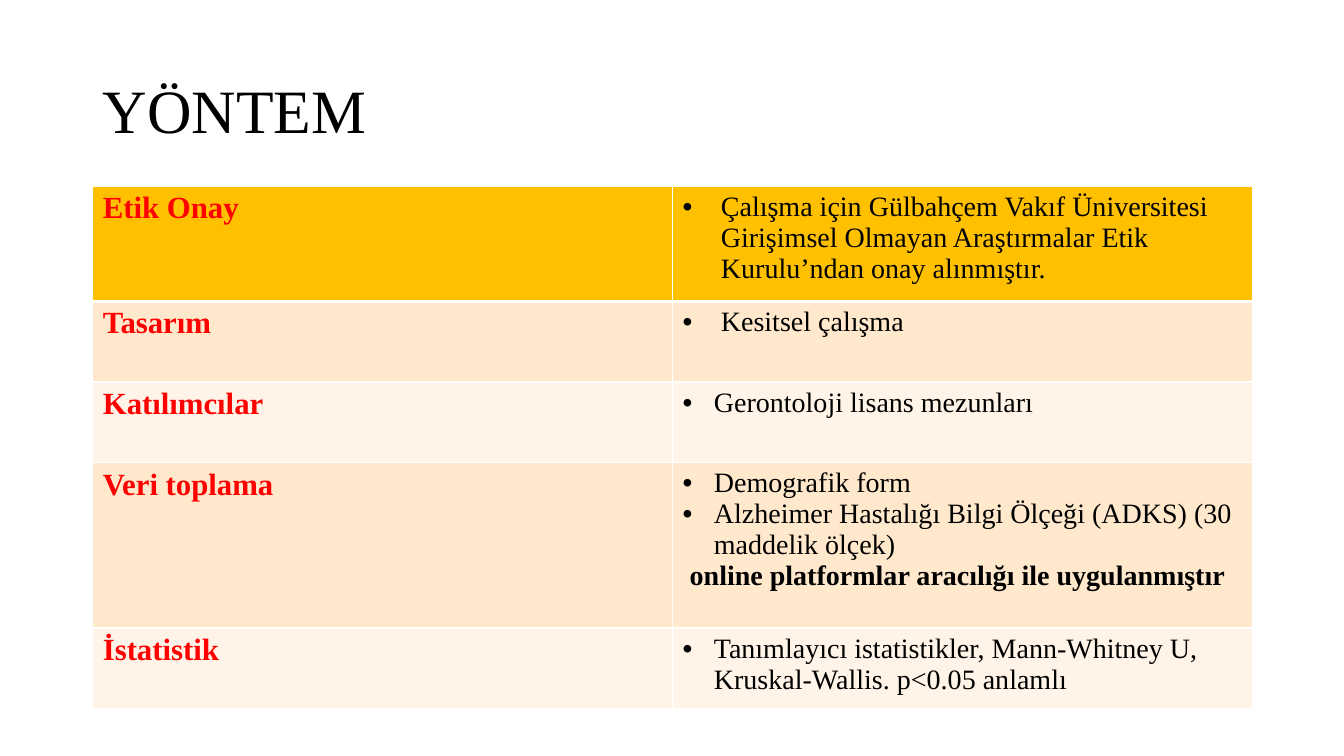
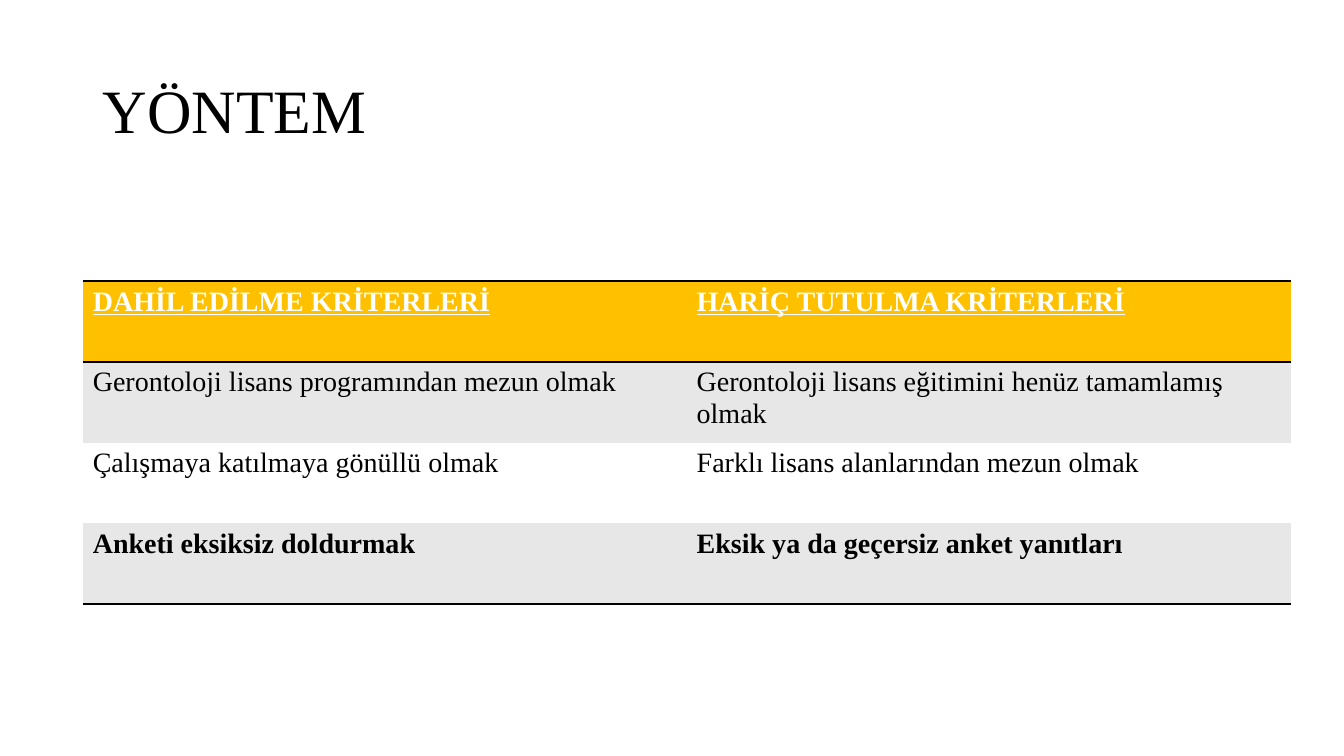
"""Build two method slides, each with a title and a two-column table."""
import pptx
import pptx.dml.color
import pptx.enum.text
import pptx.oxml.ns
import pptx.util
import lxml.etree

Inches = pptx.util.Inches
Pt = pptx.util.Pt
qn = pptx.oxml.ns.qn
FONT = "Times New Roman"
BLACK, WHITE, RED, AMBER = "000000", "FFFFFF", "FF0000", "FFC000"
PEACH, CREAM, GREY = "FFE8CC", "FFF4E7", "E7E7E7"
NO_STYLE = "{2D5ABB26-0587-4C30-8999-92F81FD0307C}"


def format_paragraph(para, size, color, bold=False, underline=False, indent=0, bullet=False):
    for span in para.runs:
        span.font.name = FONT
        span.font.size = Pt(size)
        span.font.bold = bold
        span.font.underline = underline
        span.font.color.rgb = pptx.dml.color.RGBColor.from_string(color)
    properties = para._p.get_or_add_pPr()
    if indent:
        properties.set("marL", str(Inches(indent)))
    if bullet:
        properties.set("indent", str(-Inches(indent)))
        bullet_font = lxml.etree.SubElement(properties, qn("a:buFont"))
        bullet_font.set("typeface", "Arial")
        lxml.etree.SubElement(properties, qn("a:buChar")).set("char", "•")


def add_grid(page, left, top, column_width, heights, rows, fills, line_color, edges, side_width):
    frame = page.shapes.add_table(
        len(rows), 2, Inches(left), Inches(top), Inches(2 * column_width), Inches(sum(heights)))
    grid = frame.table
    grid._tbl.tblPr.find(qn("a:tableStyleId")).text = NO_STYLE
    grid.horz_banding = False
    for column in grid.columns:
        column.width = Inches(column_width)
    for r, cells in enumerate(rows):
        grid.rows[r].height = Inches(heights[r])
        for c, paragraphs in enumerate(cells):
            cell = grid.cell(r, c)
            cell.fill.solid()
            cell.fill.fore_color.rgb = pptx.dml.color.RGBColor.from_string(fills[r])
            cell.text_frame.text = "\n".join(text for text, style in paragraphs)
            for para, (text, style) in zip(cell.text_frame.paragraphs, paragraphs):
                format_paragraph(para, **style)
            borders = [("lnL", side_width), ("lnR", side_width),
                       ("lnT", edges[r]), ("lnB", edges[r + 1])]
            for position, (side, width) in enumerate(borders):
                line = lxml.etree.Element(qn("a:" + side))
                cell._tc.tcPr.insert(position, line)
                if width:
                    line.set("w", str(Pt(width)))
                    paint = lxml.etree.SubElement(line, qn("a:solidFill"))
                    lxml.etree.SubElement(paint, qn("a:srgbClr")).set("val", line_color)
                else:
                    lxml.etree.SubElement(line, qn("a:noFill"))


deck = pptx.Presentation()
deck.slide_width = Inches(13.33)
deck.slide_height = Inches(7.5)

pages = []
for number in range(2):
    page = deck.slides.add_slide(deck.slide_layouts[6])
    box = page.shapes.add_textbox(Inches(0.92), Inches(0.4), Inches(11.5), Inches(1.45))
    box.text_frame.word_wrap = True
    box.text_frame.vertical_anchor = pptx.enum.text.MSO_ANCHOR.MIDDLE
    box.text_frame.text = "YÖNTEM"
    title = box.text_frame.paragraphs[0]
    title.line_spacing = 0.9
    format_paragraph(title, 44, BLACK)
    pages.append(page)

label = dict(size=22, color=RED, bold=True)
plain = dict(size=20, color=BLACK)
strong = dict(plain, bold=True)
heading = dict(size=20, color=WHITE, bold=True, underline=True)
wide_bullet = dict(plain, indent=0.38, bullet=True)
bullet = dict(plain, indent=0.31, bullet=True)

method_rows = [
    ("Etik Onay", [("Çalışma için Gülbahçem Vakıf Üniversitesi Girişimsel Olmayan "
                    "Araştırmalar Etik Kurulu’ndan onay alınmıştır.", wide_bullet)]),
    ("Tasarım", [("Kesitsel çalışma", wide_bullet)]),
    ("Katılımcılar", [("Gerontoloji lisans mezunları", bullet)]),
    ("Veri toplama", [
        ("Demografik form", bullet),
        ("Alzheimer Hastalığı Bilgi Ölçeği (ADKS) (30 maddelik ölçek)", bullet),
        ("online platformlar aracılığı ile uygulanmıştır", dict(strong, indent=0.07))]),
    ("İstatistik", [("Tanımlayıcı istatistikler, Mann-Whitney U, "
                     "Kruskal-Wallis. p<0.05 anlamlı", bullet)]),
]
add_grid(
    pages[0], 0.92, 1.85, 5.75, [1.14, 0.8, 0.8, 1.64, 0.8],
    [([(name, label)], details) for name, details in method_rows],
    [AMBER, PEACH, CREAM, PEACH, CREAM], WHITE, [1, 3, 1, 1, 1, 1], 1)

criteria_rows = [
    (heading, "DAHİL EDİLME KRİTERLERİ", "HARİÇ TUTULMA KRİTERLERİ"),
    (plain, "Gerontoloji lisans programından mezun olmak",
     "Gerontoloji lisans eğitimini henüz tamamlamış olmak"),
    (plain, "Çalışmaya katılmaya gönüllü olmak", "Farklı lisans alanlarından mezun olmak"),
    (strong, "Anketi eksiksiz doldurmak", "Eksik ya da geçersiz anket yanıtları"),
]
add_grid(
    pages[1], 0.82, 2.79, 5.99, [0.8] * 4,
    [([(included, style)], [(excluded, style)]) for style, included, excluded in criteria_rows],
    [AMBER, GREY, WHITE, GREY], BLACK, [2, 2, 0, 0, 2], 0)

deck.save("out.pptx")
